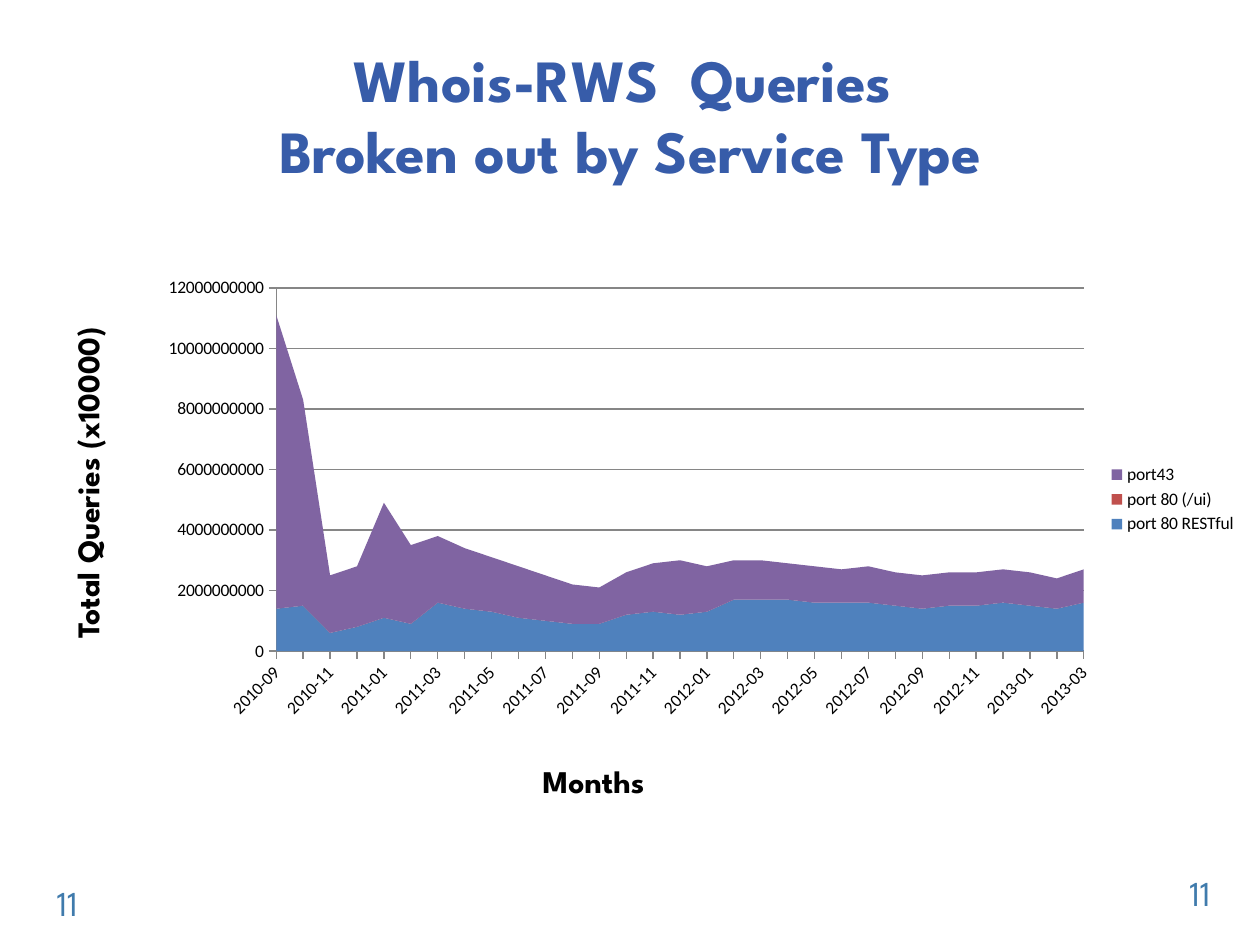
from lxml import etree
from pptx import Presentation
from pptx.chart.data import CategoryChartData
from pptx.dml.color import RGBColor
from pptx.enum.chart import XL_CHART_TYPE, XL_LEGEND_POSITION, XL_TICK_MARK
from pptx.enum.text import MSO_ANCHOR, PP_ALIGN
from pptx.oxml.ns import qn
from pptx.util import Pt

HEADING_FONT = "League Spartan"
TITLE_BLUE = RGBColor(0x37, 0x5C, 0xA9)
NUMBER_BLUE = RGBColor(0x40, 0x7B, 0xAC)
BLACK = RGBColor(0, 0, 0)
GRID_GRAY = RGBColor(0x86, 0x86, 0x86)
SERIES_COLORS = [RGBColor(0x4F, 0x81, 0xBD), RGBColor(0xC0, 0x50, 0x4D),
                 RGBColor(0x80, 0x64, 0xA2)]


def format_text(shape, text, size, color, bold, align):
    shape.text_frame.text = text
    paragraph = shape.text_frame.paragraphs[0]
    paragraph.alignment = align
    for run in paragraph.runs:
        run.font.name = HEADING_FONT
        run.font.size = Pt(size)
        run.font.bold = bold
        run.font.color.rgb = color


presentation = Presentation()
presentation.slide_width, presentation.slide_height = Pt(720), Pt(540)
slide = presentation.slides.add_slide(presentation.slide_layouts[5])

# Title
title = slide.shapes.title
title.left, title.top, title.width, title.height = Pt(15), Pt(31), Pt(690.5), Pt(68.4)
title.text_frame.vertical_anchor = MSO_ANCHOR.MIDDLE
format_text(title, "Whois-RWS  Queries \vBroken out by Service Type", 34.2,
            TITLE_BLUE, True, PP_ALIGN.CENTER)

# Axis captions and page numbers
labels = [
    ("Months", 23.8, 432, 630.7, 28.8, 0, 18, BLACK, True, PP_ALIGN.CENTER),
    ("Total Queries (x10000)", -63.4, 244.8, 226, 28.8, 270, 18, BLACK, True, PP_ALIGN.LEFT),
    ("11", 672.5, 494.6, 41.8, 38.2, 0, 20, NUMBER_BLUE, False, PP_ALIGN.LEFT),
    ("11", 25.2, 500.4, 56.2, 28.8, 0, 20, NUMBER_BLUE, False, PP_ALIGN.LEFT),
]
for text, left, top, width, height, rotation, size, color, bold, align in labels:
    box = slide.shapes.add_textbox(Pt(left), Pt(top), Pt(width), Pt(height))
    box.rotation = rotation
    box.text_frame.word_wrap = True
    format_text(box, text, size, color, bold, align)

# Chart data: monthly queries in hundreds of millions, from 2010-09 to 2013-03
restful = [14, 15, 6, 8, 11, 9, 16, 14, 13, 11, 10, 9, 9, 12, 13, 12,
           13, 17, 17, 17, 16, 16, 16, 15, 14, 15, 15, 16, 15, 14, 16]
port43 = [97, 68, 19, 20, 38, 26, 22, 20, 18, 17, 15, 13, 12, 14, 16, 18,
          15, 13, 13, 12, 12, 11, 12, 11, 11, 11, 11, 11, 11, 10, 11]
months = [divmod(2010 * 12 + 8 + offset, 12) for offset in range(len(restful))]
chart_data = CategoryChartData(number_format="0")
chart_data.categories = [f"{year}-{month + 1:02d}" for year, month in months]
for name, values in [("port 80 RESTful", restful),
                     ("port 80 (/ui)", [0] * len(restful)),
                     ("port43", port43)]:
    chart_data.add_series(name, [value * 100_000_000 for value in values])

# Stacked area chart
chart = slide.shapes.add_chart(XL_CHART_TYPE.AREA_STACKED, Pt(82), Pt(154),
                               Pt(632.2), Pt(262.8), chart_data).chart
chart.has_title = False
chart.font.name = "Calibri"
chart.font.size = Pt(10)
chart.font.color.rgb = BLACK
chart.has_legend = True
chart.legend.position = XL_LEGEND_POSITION.RIGHT
chart.legend.include_in_layout = False
for series, color in zip(chart.plots[0].series, SERIES_COLORS):
    series.format.fill.solid()
    series.format.fill.fore_color.rgb = color

# Axes
value_axis, category_axis = chart.value_axis, chart.category_axis
value_axis.minimum_scale, value_axis.maximum_scale = 0, 12_000_000_000
value_axis.major_unit = 2_000_000_000
value_axis.has_major_gridlines = True
category_axis.has_major_gridlines = False
for axis in (value_axis, category_axis):
    axis.major_tick_mark = XL_TICK_MARK.OUTSIDE
    axis.minor_tick_mark = XL_TICK_MARK.NONE
    axis.format.line.color.rgb = GRID_GRAY
    axis.tick_labels.font.size = Pt(10)
value_axis.major_gridlines.format.line.color.rgb = GRID_GRAY
value_axis.tick_labels.number_format = "0"
value_axis.tick_labels.number_format_is_linked = False
label_body = category_axis._element.find(qn("c:txPr")).find(qn("a:bodyPr"))
label_body.set("rot", "-2700000")
label_body.set("vert", "horz")

# Fixed inner plot area, as fractions of the chart
plot_area = chart._chartSpace.chart.plotArea
for old_layout in plot_area.findall(qn("c:layout")):
    plot_area.remove(old_layout)
layout = etree.Element(qn("c:layout"))
manual = etree.SubElement(layout, qn("c:manualLayout"))
for tag, value in [("layoutTarget", "inner"), ("xMode", "edge"), ("yMode", "edge"),
                   ("x", "0.12"), ("y", "0.04"), ("w", "0.73"), ("h", "0.79")]:
    etree.SubElement(manual, qn(f"c:{tag}")).set("val", value)
plot_area.insert(0, layout)

presentation.save("out.pptx")
